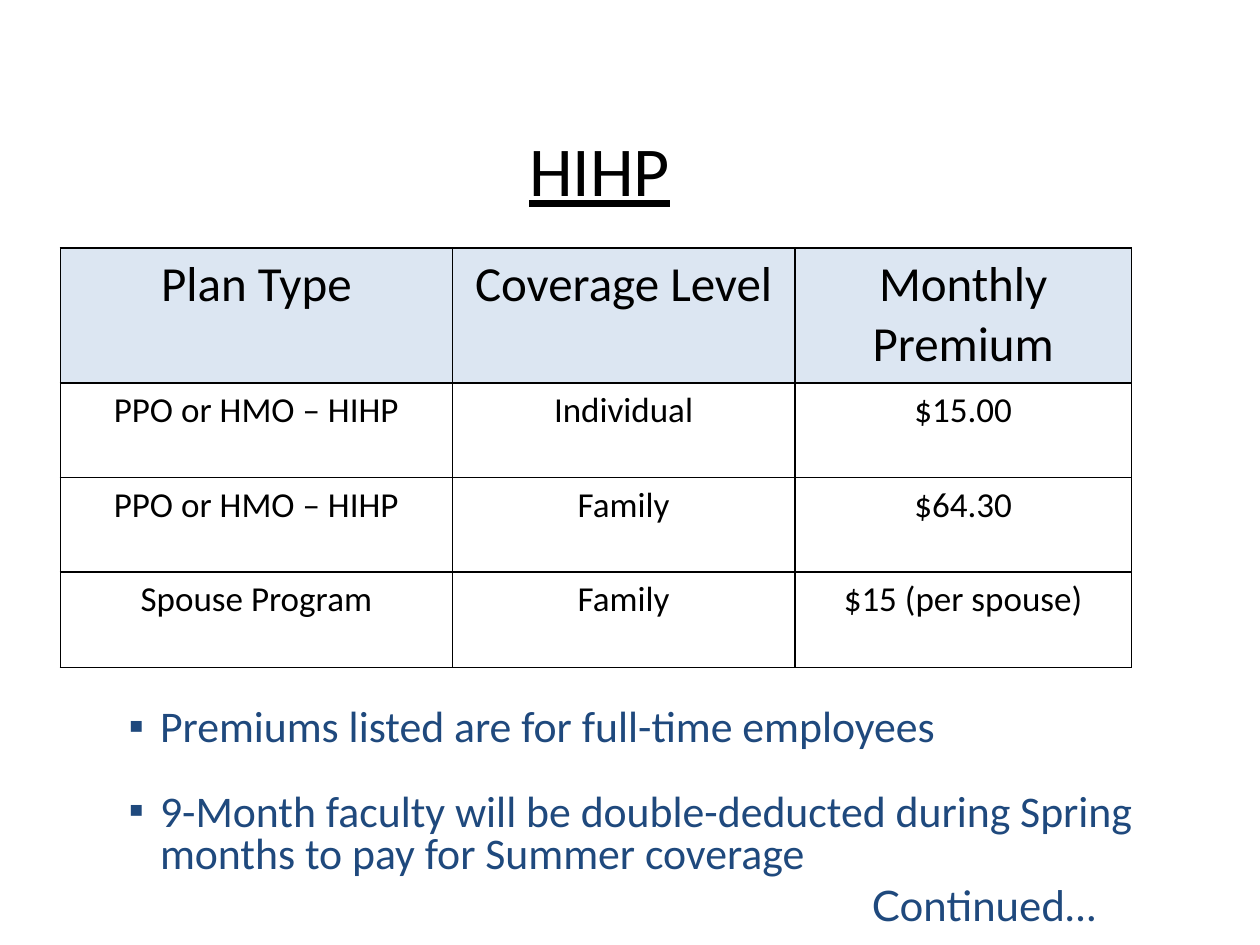
from lxml import etree
from pptx import Presentation
from pptx.dml.color import RGBColor
from pptx.enum.text import MSO_ANCHOR, MSO_AUTO_SIZE, PP_ALIGN
from pptx.oxml.ns import qn
from pptx.util import Inches, Pt

CENTER, LEFT, RIGHT = PP_ALIGN.CENTER, PP_ALIGN.LEFT, PP_ALIGN.RIGHT
MIDDLE, TOP = MSO_ANCHOR.MIDDLE, MSO_ANCHOR.TOP
NO_FIT = MSO_AUTO_SIZE.NONE

BLACK = RGBColor(0x00, 0x00, 0x00)
NAVY = RGBColor(0x1F, 0x49, 0x7D)
PALE_BLUE = RGBColor(0xDC, 0xE6, 0xF2)

COL_WIDTHS = (3.11, 2.72, 2.67)
ROW_HEIGHTS = (1.07, 0.75, 0.75, 0.76)
PREMIUMS = (
    ("Plan Type", "Coverage Level", "Monthly Premium"),
    ("PPO or HMO – HIHP", "Individual", "$15.00"),
    ("PPO or HMO – HIHP", "Family", "$64.30"),
    ("Spouse Program", "Family", "$15 (per spouse)"),
)
NOTES = (
    "Premiums listed are for full-time employees",
    "9-Month faculty will be double-deducted during Spring months "
    "to pay for Summer coverage",
)


def place(shape, box):
    shape.left, shape.top, shape.width, shape.height = map(Inches, box)


def style(p, size, color, align, font="Calibri"):
    p.alignment = align
    p.space_before = Pt(0)
    for r in p.runs:
        r.font.size = Pt(size)
        r.font.name = font
        r.font.color.rgb = color


def add_bullet(p, char, indent):
    pPr = p._p.get_or_add_pPr()
    pPr.set("marL", str(Inches(indent)))
    pPr.set("indent", str(-Inches(indent)))
    etree.SubElement(pPr, qn("a:buChar"), char=char)


def add_borders(cell, width=Pt(1)):
    tcPr = cell._tc.get_or_add_tcPr()
    for i, side in enumerate(("a:lnL", "a:lnR", "a:lnT", "a:lnB")):
        ln = etree.Element(qn(side), w=str(width))
        fill = etree.SubElement(ln, qn("a:solidFill"))
        etree.SubElement(fill, qn("a:srgbClr"), val=str(BLACK))
        tcPr.insert(i, ln)


def add_title(slide, box):
    title = slide.shapes.title
    place(title, box)
    tf = title.text_frame
    tf.text = "HIHP"
    tf.auto_size = NO_FIT
    tf.vertical_anchor = MIDDLE
    p = tf.paragraphs[0]
    style(p, 40, BLACK, CENTER)
    p.runs[0].font.underline = True


def add_premium_table(slide, box):
    table = slide.shapes.add_table(
        len(PREMIUMS), len(COL_WIDTHS), *map(Inches, box)).table
    table.first_row = table.horz_banding = False
    for col, width in zip(table.columns, COL_WIDTHS):
        col.width = Inches(width)
    for i, (row, height) in enumerate(zip(table.rows, ROW_HEIGHTS)):
        row.height = Inches(height)
        for cell, text in zip(row.cells, PREMIUMS[i]):
            cell.text = text
            style(cell.text_frame.paragraphs[0], 20 if i else 28, BLACK, CENTER)
            if i:
                cell.fill.background()
            else:
                cell.fill.solid()
                cell.fill.fore_color.rgb = PALE_BLUE
            add_borders(cell)


def add_notes_list(slide, box):
    body = slide.placeholders[1]
    place(body, box)
    tf = body.text_frame
    tf.text = "\n".join(NOTES)
    tf.auto_size = NO_FIT
    tf.vertical_anchor = TOP
    for i, p in enumerate(tf.paragraphs):
        add_bullet(p, "▪", 0.25)
        style(p, 25, NAVY, LEFT)
        p.line_spacing = 0.8
        if i:
            p.space_before = Pt(24.4)


def add_continued(slide, box):
    tf = slide.shapes.add_textbox(*map(Inches, box)).text_frame
    tf.word_wrap = True
    tf.text = "Continued…"
    style(tf.paragraphs[0], 24, NAVY, RIGHT, "Lato")


def main():
    prs = Presentation()
    prs.slide_width, prs.slide_height = Inches(10), Inches(7.5)
    slide = prs.slides.add_slide(prs.slide_layouts[1])
    add_title(slide, (0.3, 0.92, 8.92, 0.83))
    add_notes_list(slide, (0.92, 5.58, 8.33, 1.46))
    add_continued(slide, (6.13, 6.93, 2.67, 0.5))
    add_premium_table(slide, (0.48, 1.97, 8.5, 3.33))
    prs.save("out.pptx")


if __name__ == "__main__":
    main()
